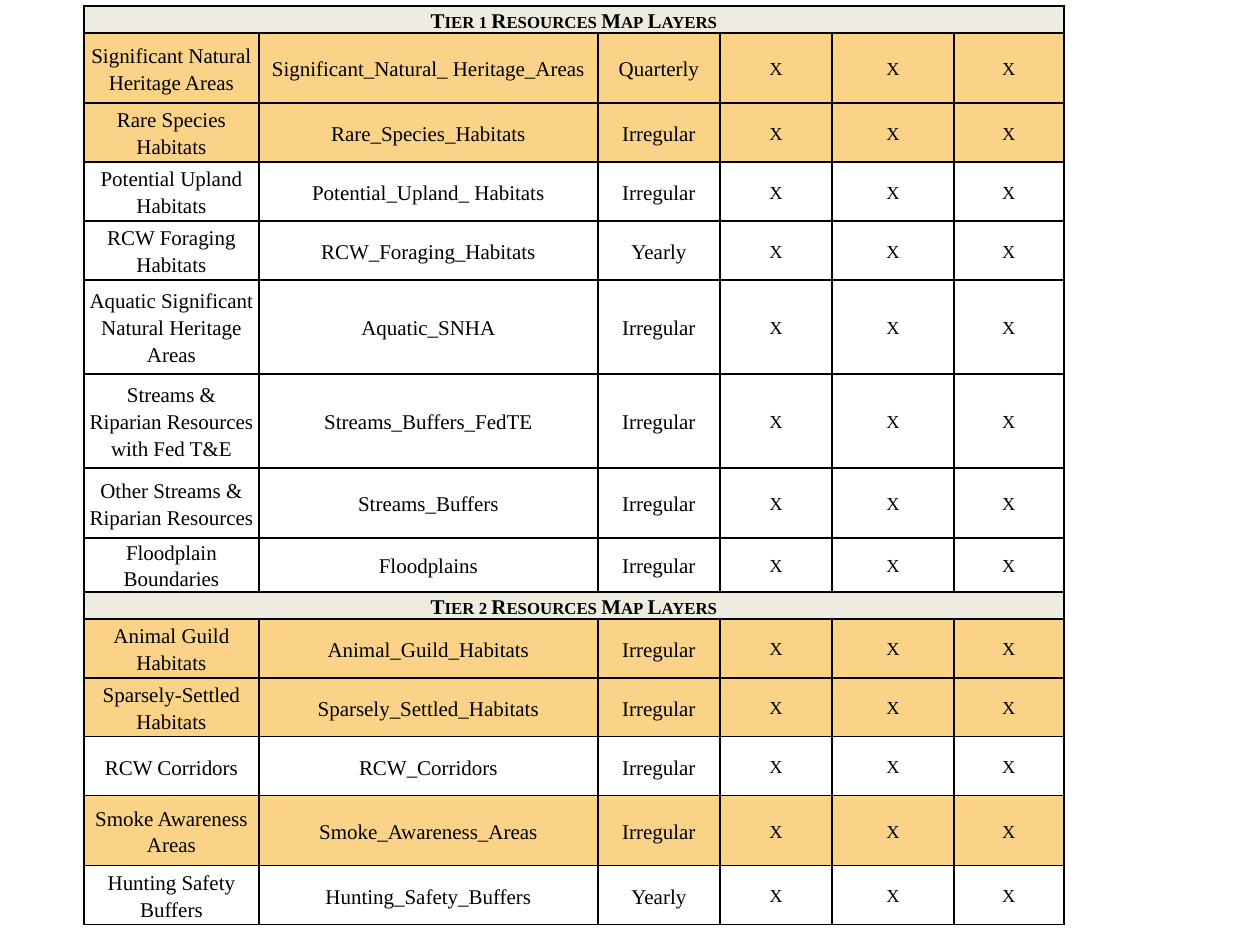
from lxml import etree
from pptx import Presentation, util as u
from pptx.dml.color import RGBColor
from pptx.enum import text
from pptx.oxml import ns

PX = u.Inches(1) // 126
FONT = "Times New Roman"
BLACK, HEADING, HIGHLIGHT = "000000", "EEECE1", "FBD388"
COLS = [175, 339, 122, 112, 122, 110]

# height, fill, texts; a row with one text is a heading across the table
ROWS = [
    (27, HEADING, ["Tier 1 Resources Map Layers"]),
    (70, HIGHLIGHT, ["Significant Natural Heritage Areas", "Significant_Natural_ Heritage_Areas", "Quarterly"]),
    (59, HIGHLIGHT, ["Rare Species Habitats", "Rare_Species_Habitats", "Irregular"]),
    (59, None, ["Potential Upland Habitats", "Potential_Upland_ Habitats", "Irregular"]),
    (59, None, ["RCW Foraging Habitats", "RCW_Foraging_Habitats", "Yearly"]),
    (94, None, ["Aquatic Significant Natural Heritage Areas", "Aquatic_SNHA", "Irregular"]),
    (94, None, ["Streams & Riparian Resources with Fed T&E", "Streams_Buffers_FedTE", "Irregular"]),
    (70, None, ["Other Streams & Riparian Resources", "Streams_Buffers", "Irregular"]),
    (54, None, ["Floodplain Boundaries", "Floodplains", "Irregular"]),
    (27, HEADING, ["Tier 2 Resources Map Layers"]),
    (59, HIGHLIGHT, ["Animal Guild Habitats", "Animal_Guild_Habitats", "Irregular"]),
    (59, HIGHLIGHT, ["Sparsely-Settled Habitats", "Sparsely_Settled_Habitats", "Irregular"]),
    (59, None, ["RCW Corridors", "RCW_Corridors", "Irregular"]),
    (70, HIGHLIGHT, ["Smoke Awareness Areas", "Smoke_Awareness_Areas", "Irregular"]),
    (59, None, ["Hunting Safety Buffers", "Hunting_Safety_Buffers", "Yearly"]),
]


def paint(fill, color):
    fill.solid()
    fill.fore_color.rgb = RGBColor.from_string(color)


def style_cell(cell, color):
    """Set margins, borders and fill; borders must come before the fill."""
    cell.margin_left = cell.margin_right = 5 * PX
    cell.margin_top = cell.margin_bottom = 0
    cell.vertical_anchor = text.MSO_ANCHOR.MIDDLE
    tcPr = cell._tc.get_or_add_tcPr()
    for side in ("a:lnL", "a:lnR", "a:lnT", "a:lnB"):
        ln = etree.SubElement(tcPr, ns.qn(side), w=str(u.Pt(1)))
        solid = etree.SubElement(ln, ns.qn("a:solidFill"))
        etree.SubElement(solid, ns.qn("a:srgbClr"), val=BLACK)
    if color:
        paint(cell.fill, color)
    else:
        cell.fill.background()


def write_cell(cell, words, size=12, heading=False):
    p = cell.text_frame.paragraphs[0]
    p.alignment = text.PP_ALIGN.CENTER
    p.line_spacing = 1.15
    r = p.add_run()
    r.text = words
    r.font.name, r.font.size, r.font.bold = FONT, u.Pt(size), heading
    paint(r.font.fill, BLACK)
    if heading:
        r.font._element.set("cap", "small")


def add_layer_table(s, x, y):
    heights = [row[0] for row in ROWS]
    table = s.shapes.add_table(len(ROWS), len(COLS), x * PX, y * PX,
                               sum(COLS) * PX, sum(heights) * PX).table
    table.first_row = table.horz_banding = False
    for column, width in zip(table.columns, COLS):
        column.width = width * PX
    for i, (height, color, words) in enumerate(ROWS):
        table.rows[i].height = height * PX
        cells = list(table.rows[i].cells)
        for cell in cells:
            style_cell(cell, color)
        if len(words) == 1:
            cells[0].merge(cells[-1])
            write_cell(cells[0], words[0], heading=True)
            continue
        for cell, label in zip(cells, words):
            write_cell(cell, label)
        for cell in cells[len(words):]:
            write_cell(cell, "X", size=10.5)


def main():
    prs = Presentation()
    prs.slide_width, prs.slide_height = u.Inches(10), u.Inches(7.5)
    s = prs.slides.add_slide(prs.slide_layouts[6])
    add_layer_table(s, 84, 6)
    prs.save("out.pptx")


if __name__ == "__main__":
    main()
